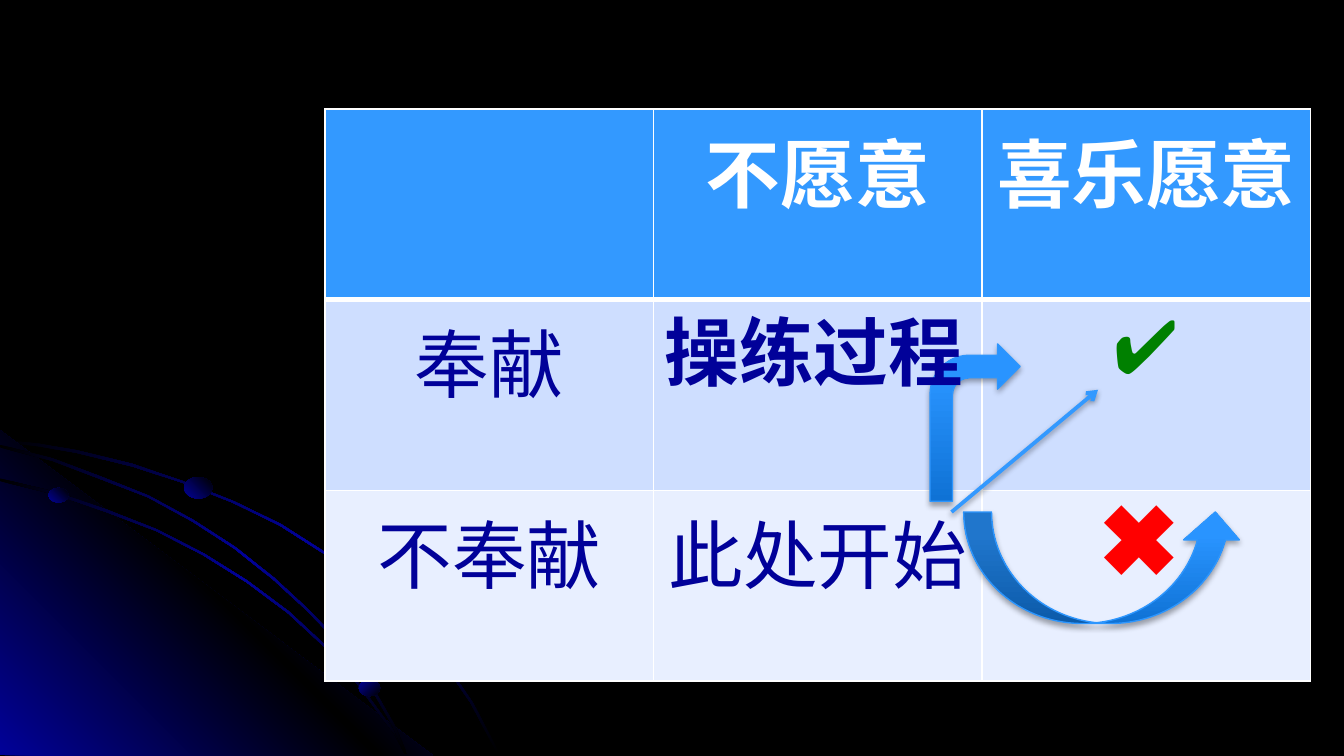
import pptx
import pptx.util
import pptx.dml.color
import pptx.enum.shapes
import pptx.enum.text
import pptx.oxml.ns
import lxml.etree

PX = 9144
WIDE = 1000
NAVY, BLACK, WHITE, SKY = "010199", "000000", "FFFFFF", "3399FF"
GLOW = [(0, "0F72D5"), (80, "2994FF"), (100, "2B95FF")]
FADE = [(0, NAVY), (100, BLACK)]
BEAM = [(0, BLACK), (50, NAVY), (100, BLACK)]
KIND = pptx.enum.shapes.MSO_SHAPE
ALIGN = pptx.enum.text.PP_ALIGN


def px(*nums):
    """Turn px lengths into EMU."""
    return [pptx.util.Emu(round(n * PX)) for n in nums]


def paint(color, code):
    """Set a colour from a hex string."""
    color.rgb = pptx.dml.color.RGBColor.from_string(code)


def node(parent, tag, **attrs):
    """Append a drawing element with attributes."""
    return lxml.etree.SubElement(
        parent, pptx.oxml.ns.qn("a:" + tag), {k: str(v) for k, v in attrs.items()})


def blend(shape, stops, angle):
    """Fill a shape with a gradient at a clockwise angle."""
    shape.fill.gradient()
    shape.fill.gradient_angle = (360 - angle) % 360
    stop_list = shape._element.spPr.find(".//" + pptx.oxml.ns.qn("a:gsLst"))
    for old in list(stop_list):
        stop_list.remove(old)
    for place, code in stops:
        node(node(stop_list, "gs", pos=place * 1000), "srgbClr", val=code)


def shade(shape, alpha, dist):
    """Give a shape or line a soft shadow straight below."""
    effects = node(shape._element.spPr, "effectLst")
    outer = node(effects, "outerShdw", blurRad=40000, dist=dist, dir=5400000,
                 rotWithShape=0)
    node(node(outer, "srgbClr", val=BLACK), "alpha", val=alpha * 1000)


def write(para, text, size, code, bold, align):
    """Write one run into a paragraph."""
    para.alignment = align
    run = para.add_run()
    run.text = text
    run.font.name = "Arial"
    run.font.size = pptx.util.Pt(size)
    run.font.bold = bold
    paint(run.font.color, code)


def outline(slide, x, y, points, stops, angle):
    """Draw a closed, borderless outline with a gradient."""
    first, *rest = [(x + a, y + b) for a, b in points]
    pen = slide.shapes.build_freeform(*first, scale=PX)
    pen.add_line_segments(rest, close=True)
    shape = pen.convert_to_shape()
    shape.shadow.inherit = False
    shape.line.fill.background()
    blend(shape, stops, angle)


def ribbon(slide, x, y, edge):
    """Draw a thin band whose width turns from vertical to level."""
    last = len(edge) - 1
    inner = [(a - 2 * i / last, b + 2 - 2 * i / last)
             for i, (a, b) in enumerate(edge)]
    outline(slide, x, y, edge + inner[::-1], BEAM, 45)


def orbit(slide, x, y, w, h):
    """Draw the glowing corner with its bands and beads."""
    ribbon(slide, x, y, [
        (0, 7), (28, 10), (57, 15), (98, 25), (136, 38), (174, 53), (209, 70),
        (242, 91), (272, 113), (300, 138), (325, 166), (339, 184), (352, 203),
        (362, 222), (372, 241)])
    outline(slide, x, y, [(w, h), (0, h), (0, 0)],
            [(0, NAVY), (50, BLACK), (100, NAVY)], 315)
    ribbon(slide, x, y, [
        (0, 36), (41, 46), (79, 59), (117, 74), (152, 92), (184, 112),
        (215, 135), (242, 160), (266, 187), (286, 214), (296, 227), (303, 241)])
    ribbon(slide, x, y, [
        (0, 11), (39, 21), (76, 35), (111, 49), (144, 67), (175, 87), (204, 110),
        (229, 133), (254, 159), (269, 179), (282, 199), (294, 220), (303, 241)])
    for left, top, wide, high, angle in [
            (36, 43, 15, 11, 315), (267, 186, 16, 12, 45), (137, 35, 21, 16, 315)]:
        bead = slide.shapes.add_shape(
            KIND.OVAL, *px(x + left, y + top, wide, high))
        bead.shadow.inherit = False
        bead.line.fill.background()
        blend(bead, FADE, angle)


def border(cell, top, bottom):
    """Draw white cell borders with the given top and bottom widths."""
    props = cell._tc.get_or_add_tcPr()
    for side, width in (("L", 1), ("R", 1), ("T", top), ("B", bottom)):
        line = node(props, "ln" + side, w=width * 12700)
        node(node(line, "solidFill"), "srgbClr", val=WHITE)


def grid(slide, x, y, w, h):
    """Place the table of willingness against offering."""
    rows = [["", "不愿意", "喜乐愿意"], ["奉献", "", "✔"], ["不奉献", "此处开始", ""]]
    fills = [SKY, "CEDEFF", "E8EFFF"]
    table = slide.shapes.add_table(3, 3, *px(x, y, w, h)).table
    for r, row in enumerate(rows):
        for c, text in enumerate(row):
            cell = table.cell(r, c)
            border(cell, 3 if r == 1 else 1, 3 if r == 0 else 1)
            cell.fill.solid()
            paint(cell.fill.fore_color, fills[r])
            if text:
                code = WHITE if r == 0 else "008000" if text == "✔" else NAVY
                write(cell.text_frame.paragraphs[0], text, 40, code, r == 0,
                      ALIGN.CENTER)


def arrows(slide, x, y):
    """Place the block arrows and the thin arrow over the table."""
    for kind, box in [(KIND.BENT_ARROW, (450, 175, 67, 117)),
                      (KIND.CURVED_UP_ARROW, (475, 300, 208, 83))]:
        left, top, wide, high = box
        arrow = slide.shapes.add_shape(kind, *px(x + left, y + top, wide, high))
        blend(arrow, GLOW, 270)
        paint(arrow.line.color, "2D96FE")
        arrow.line.width = pptx.util.Pt(0.75)
        shade(arrow, 35, 23000)
    line = slide.shapes.add_connector(
        pptx.enum.shapes.MSO_CONNECTOR.STRAIGHT,
        *px(x + 466, y + 300, x + 575, y + 209))
    paint(line.line.color, SKY)
    line.line.width = pptx.util.Pt(2)
    node(line.line._get_or_add_ln(), "tailEnd", type="arrow")
    shade(line, 38, 20000)


def labels(slide, x, y):
    """Place the free labels over the table."""
    for text, size, code, align, box in [
            ("操练过程", 40, NAVY, ALIGN.CENTER, (241, 142, 245, 77)),
            ("✖", 54, "FF0000", ALIGN.LEFT, (566, 267, 78, 101))]:
        left, top, wide, high = box
        frame = slide.shapes.add_textbox(
            *px(x + left, y + top, wide, high)).text_frame
        frame.word_wrap = False
        frame.auto_size = pptx.enum.text.MSO_AUTO_SIZE.SHAPE_TO_FIT_TEXT
        write(frame.paragraphs[0], text, size, code, True, align)


def main():
    """Build and save the slide."""
    deck = pptx.Presentation()
    deck.slide_width, deck.slide_height = px(WIDE, WIDE * 9 / 16)
    slide = deck.slides.add_slide(deck.slide_layouts[6])
    slide.background.fill.solid()
    paint(slide.background.fill.fore_color, BLACK)
    orbit(slide, 0, 320, 322, 242)
    grid(slide, 242, 81, 733, 426)
    arrows(slide, 242, 81)
    labels(slide, 242, 81)
    deck.save("out.pptx")


if __name__ == "__main__":
    main()
